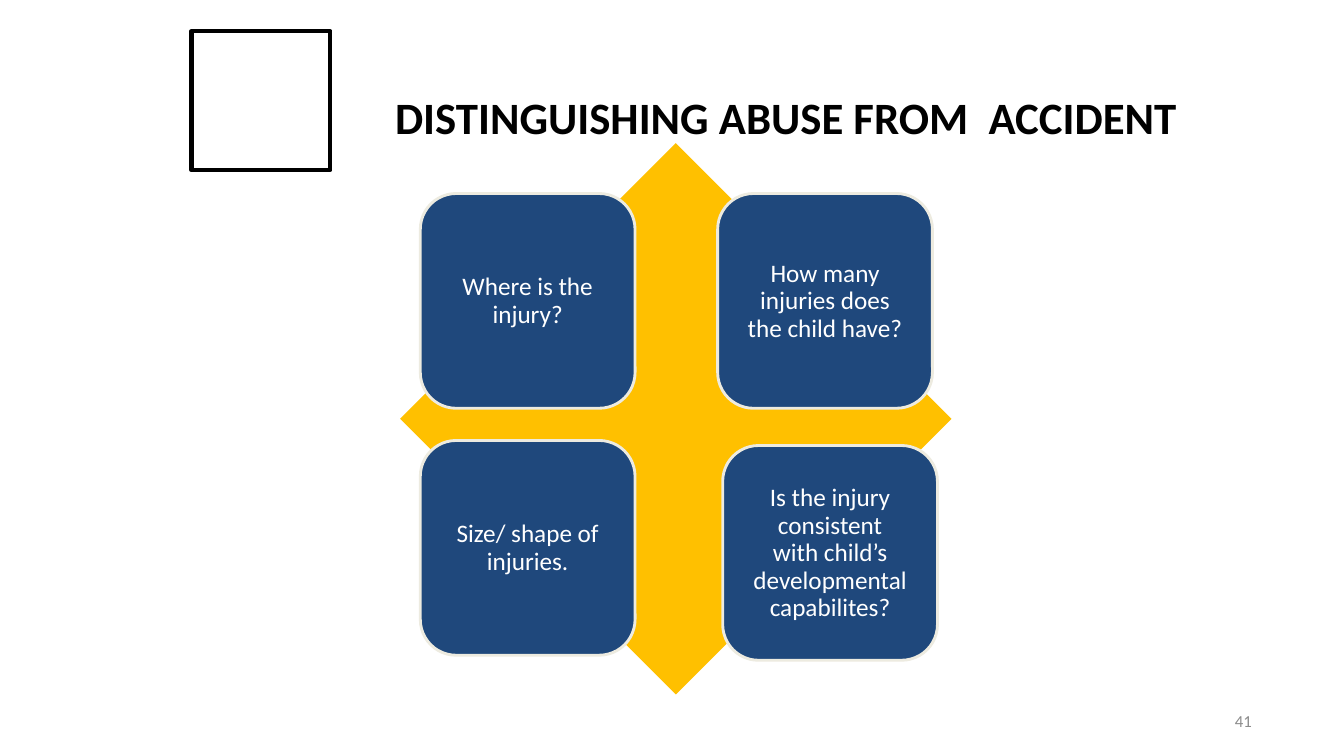
from pptx import Presentation
from pptx.dml.color import RGBColor as Rgb
from pptx.enum.shapes import MSO_SHAPE as Kind
from pptx.enum.text import MSO_ANCHOR as Anchor, PP_ALIGN as Align
from pptx.util import Pt

TITLE = "DISTINGUISHING ABUSE FROM  ACCIDENT"
PAGE = "41"
# Text, column, row, nudge right and down
CARDS = [
    ("Where is the injury?", 0, 0, 0),
    ("How many injuries does the child have?", 1, 0, 0),
    ("Size/ shape of injuries.", 0, 1, 0),
    ("Is the injury consistent with child’s developmental capabilites?", 1, 1, 3.6),
]
COLORS = {
    "ink": "000000", "gold": "FFC000", "navy": "1F487C",
    "cream": "EDEBE0", "white": "FFFFFF", "gray": "8C8C8C",
}
FONT = "Calibri"
LEFT, TOP, SIDE = 300.24, 138.24, 153.4
STEP_X, STEP_Y = 212.4, 176.4
INSET = 14


def color(name):
    return Rgb.from_string(COLORS[name])


def add_form(slide, kind, box, fill=None, line=None, width=0):
    form = slide.shapes.add_shape(kind, *map(Pt, box))
    form.shadow.inherit = False
    if fill:
        form.fill.solid()
        form.fill.fore_color.rgb = color(fill)
    else:
        form.fill.background()
    if line:
        form.line.color.rgb = color(line)
        form.line.width = Pt(width)
    else:
        form.line.fill.background()
    return form


def write(shape, text, size, ink, align, inset=0, bold=False, pitch=None):
    """Fill a shape with one paragraph; pitch is the exact line height."""
    frame = shape.text_frame
    frame.word_wrap = True
    frame.vertical_anchor = Anchor.MIDDLE
    frame.margin_left = frame.margin_right = Pt(inset)
    frame.margin_top = frame.margin_bottom = 0
    para = frame.paragraphs[0]
    para.alignment = align
    if pitch:
        para.line_spacing = Pt(pitch)
    run = para.add_run()
    run.text = text
    font = run.font
    font.name, font.size, font.bold = FONT, Pt(size), bold
    font.color.rgb = color(ink)


def add_label(slide, box, *style, **more):
    write(slide.shapes.add_textbox(*map(Pt, box)), *style, **more)


def main():
    deck = Presentation()
    deck.slide_width, deck.slide_height = Pt(960), Pt(540)
    slide = deck.slides.add_slide(deck.slide_layouts[6])

    add_label(slide, (282.2, 63.4, 640, 40), TITLE, 32, "ink", Align.LEFT, bold=True)
    add_form(slide, Kind.RECTANGLE, (136.8, 22.3, 99.2, 99.2), line="ink", width=3)
    add_form(slide, Kind.DIAMOND, (285.84, 102.24, 393.84, 393.84), fill="gold")

    for text, col, row, nudge in CARDS:
        box = (LEFT + col * STEP_X + nudge, TOP + row * STEP_Y + nudge, SIDE, SIDE)
        card = add_form(slide, Kind.ROUNDED_RECTANGLE, box, "navy", "cream", 2.04)
        write(card, text, 18, "white", Align.CENTER, inset=INSET, pitch=19.7)

    add_label(slide, (678.24, 500.4, 216, 28.8), PAGE, 12, "gray", Align.RIGHT)
    deck.save("out.pptx")


if __name__ == "__main__":
    main()
